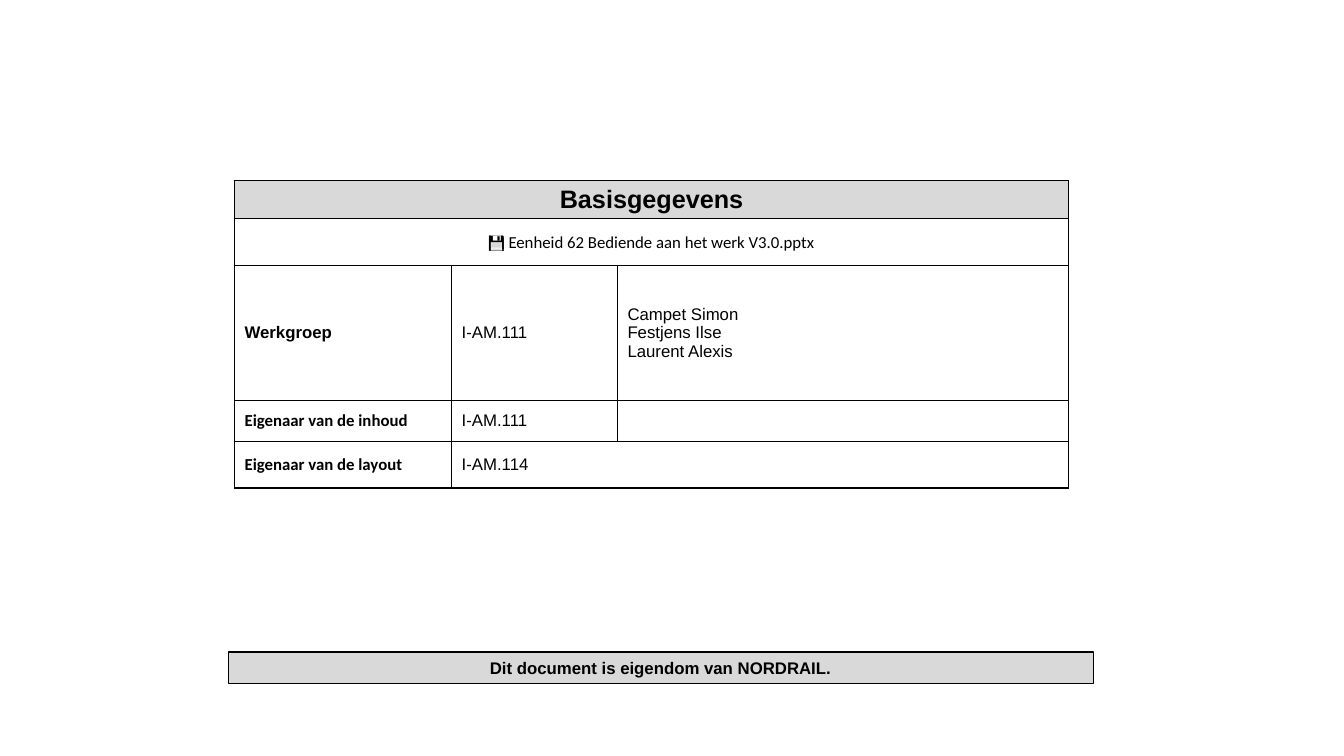
from lxml.etree import SubElement
from pptx import Presentation
from pptx.dml.color import RGBColor
from pptx.enum.shapes import MSO_SHAPE
from pptx.enum.text import MSO_ANCHOR, PP_ALIGN
from pptx.oxml.ns import qn
from pptx.util import Cm, Pt


def color(value):
    return RGBColor.from_string(value)


def add_run(paragraph, text, font_name, bold, size=12):
    run = paragraph.add_run()
    run.text = text
    run.font.name = font_name
    run.font.size = Pt(size)
    run.font.bold = bold
    run.font.color.rgb = color(BLACK)


BLACK = "000000"
GRAY = "D9D9D9"

presentation = Presentation()
presentation.slide_width = Cm(33.87)
presentation.slide_height = Cm(19.05)
slide = presentation.slides.add_slide(presentation.slide_layouts[6])

owner_bar = slide.shapes.add_shape(
    MSO_SHAPE.RECTANGLE, Cm(5.75), Cm(16.43), Cm(21.8), Cm(0.8)
)
owner_bar.shadow.inherit = False
owner_bar.fill.solid()
owner_bar.fill.fore_color.rgb = color(GRAY)
owner_bar.line.color.rgb = color(BLACK)
owner_bar.line.width = Pt(0.75)
owner_bar.text_frame.word_wrap = True
owner_paragraph = owner_bar.text_frame.paragraphs[0]
owner_paragraph.alignment = PP_ALIGN.CENTER
add_run(owner_paragraph, "Dit document is eigendom van NORDRAIL.", "Arial", True)

column_widths = [5.47, 4.18, 11.37]
row_heights = [0.82, 1.18, 3.39, 1, 1.18]
table = slide.shapes.add_table(
    len(row_heights), len(column_widths),
    Cm(5.91), Cm(4.55), Cm(sum(column_widths)), Cm(sum(row_heights)),
).table
for column, width in zip(table.columns, column_widths):
    column.width = Cm(width)
for row, height in zip(table.rows, row_heights):
    row.height = Cm(height)

for cell in table.iter_cells():
    cell.vertical_anchor = MSO_ANCHOR.MIDDLE
    properties = cell._tc.get_or_add_tcPr()
    for side in ("a:lnL", "a:lnR", "a:lnT", "a:lnB"):
        border = SubElement(properties, qn(side), w=str(Pt(1)))
        border_fill = SubElement(border, qn("a:solidFill"))
        SubElement(border_fill, qn("a:srgbClr"), val=BLACK)
    cell.fill.background()

title_cell = table.cell(0, 0)
title_cell.merge(table.cell(0, 2))
title_cell.vertical_anchor = MSO_ANCHOR.TOP
title_cell.fill.solid()
title_cell.fill.fore_color.rgb = color(GRAY)
title_paragraph = title_cell.text_frame.paragraphs[0]
title_paragraph.alignment = PP_ALIGN.CENTER
add_run(title_paragraph, "Basisgegevens", "Arial", True, 18)

file_cell = table.cell(1, 0)
file_cell.merge(table.cell(1, 2))
file_paragraph = file_cell.text_frame.paragraphs[0]
file_paragraph.alignment = PP_ALIGN.CENTER
add_run(file_paragraph, "💾 ", "Calibri", True)
add_run(file_paragraph, "Eenheid 62 Bediende aan het werk V3.0.pptx", "Calibri", False)

table.cell(4, 1).merge(table.cell(4, 2))
details = [
    ("Werkgroep", "Arial", "I-AM.111"),
    ("Eigenaar van de inhoud", "Calibri", "I-AM.111"),
    ("Eigenaar van de layout", "Calibri", "I-AM.114"),
]
for row_index, (label, label_font, department) in enumerate(details, start=2):
    label_paragraph = table.cell(row_index, 0).text_frame.paragraphs[0]
    add_run(label_paragraph, label, label_font, True)
    department_paragraph = table.cell(row_index, 1).text_frame.paragraphs[0]
    add_run(department_paragraph, department, "Arial", False)

members_frame = table.cell(2, 2).text_frame
for index, member in enumerate(["Campet Simon", "Festjens Ilse", "Laurent Alexis"]):
    member_paragraph = members_frame.add_paragraph() if index else members_frame.paragraphs[0]
    add_run(member_paragraph, member, "Arial", False)

presentation.save("out.pptx")
